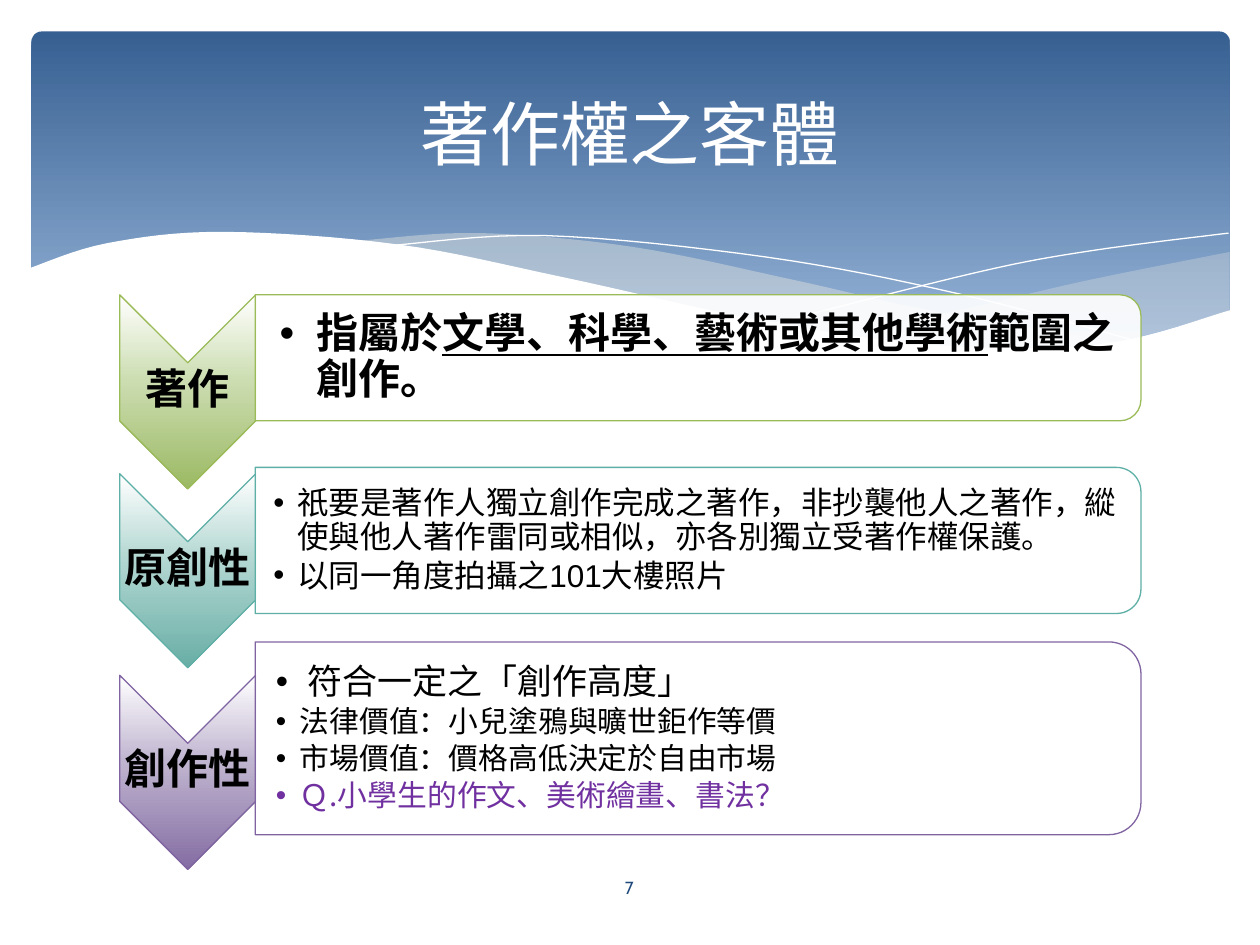
from lxml import etree
from pptx import Presentation
from pptx.dml.color import RGBColor
from pptx.enum.shapes import MSO_SHAPE
from pptx.enum.text import MSO_ANCHOR, PP_ALIGN
from pptx.oxml.ns import qn
from pptx.util import Inches, Pt

CENTER, LEFT = PP_ALIGN.CENTER, PP_ALIGN.LEFT
MIDDLE = MSO_ANCHOR.MIDDLE
CHEVRON, PANEL = MSO_SHAPE.CHEVRON, MSO_SHAPE.ROUND_2_SAME_RECTANGLE
HEADER = MSO_SHAPE.ROUNDED_RECTANGLE
CJK = "Noto Sans CJK SC"
COLORS = {
    "white": "FFFFFF", "black": "000000", "navy": "376092", "sky": "95B3D7",
    "cream": "EEECE1", "number": "1F497D", "question": "7030A0",
    "green": "9BBB59", "green mid": "CCDDB1", "green end": "9BB963",
    "teal": "5EAFA6", "teal mid": "B3D7D2", "teal end": "68AEA6",
    "purple": "8064A2", "purple mid": "C0B5D0", "purple end": "846DA3",
}


def paint(shape, fill=None, line=None, width=0.75, opacity=100):
    """Fill with a colour name or a list of (percent, colour name) stops."""
    shape.shadow.inherit = False
    props = shape.element.spPr
    if isinstance(fill, list):
        shape.fill.gradient()
        shape.fill.gradient_angle = 270
        gradient = props.find(qn("a:gradFill"))
        gradient.set("rotWithShape", "0")
        stops = gradient.find(qn("a:gsLst"))
        for old in list(stops):
            stops.remove(old)
        for position, color in fill:
            stop = etree.SubElement(stops, qn("a:gs"), pos=str(position * 1000))
            etree.SubElement(stop, qn("a:srgbClr"), val=COLORS[color])
    elif fill:
        shape.fill.solid()
        shape.fill.fore_color.rgb = RGBColor.from_string(COLORS[fill])
        if opacity < 100:
            color = props.find(qn("a:solidFill")).find(qn("a:srgbClr"))
            etree.SubElement(color, qn("a:alpha"), val=str(opacity * 1000))
    else:
        shape.fill.background()
    if line:
        shape.line.color.rgb = RGBColor.from_string(COLORS[line])
        shape.line.width = Pt(width)
    else:
        shape.line.fill.background()


def write(paragraph, pieces, size, color="black", latin=CJK, align=LEFT, **formats):
    """Add (text, underlined) pieces as runs."""
    paragraph.alignment = align
    for text, underlined in pieces:
        run = paragraph.add_run()
        run.text = text
        values = {"name": latin, "size": Pt(size), **formats}
        if underlined:
            values["underline"] = True
        for name, value in values.items():
            setattr(run.font, name, value)
        run.font.color.rgb = RGBColor.from_string(COLORS[color])
        east_asian = etree.Element(qn("a:ea"), typeface=CJK)
        run.font._element.find(qn("a:latin")).addnext(east_asian)


prs = Presentation()
prs.slide_width, prs.slide_height = Inches(10), Inches(7.5)
slide = prs.slides.add_slide(prs.slide_layouts[5])
shapes = slide.shapes

# Header band
header = shapes.add_shape(HEADER, Inches(0.25), Inches(0.25), Inches(9.51), Inches(2.7))
header.adjustments[0] = 0.03
paint(header, [(0, "navy"), (90, "sky")])

# Waves: each edge is a smooth curve through a few knots
hairline = {"line": "white", "width": 0}
waves = [
    ([[(9.76, 2), (8.61, 2.23), (7.53, 2.48), (6.61, 2.65)],
      [(6.61, 2.65), (7.69, 2.77), (8.72, 2.74), (9.76, 2.47)]],
     {"fill": "cream", "opacity": 29}),
    ([[(8.93, 2.73), (7.41, 2.47), (6.29, 2.22), (5.02, 1.96), (3.8, 1.85), (2.86, 1.91)],
      [(2.86, 1.91), (4.49, 2.22), (6.01, 2.55), (7.48, 2.76), (8.93, 2.73)]],
     {"fill": "cream", "opacity": 40}),
    ([[(3.09, 1.95), (4.33, 1.87), (6.08, 2.04), (7.6, 2.33), (9.07, 2.72)]], hairline),
    ([[(6.13, 2.57), (7.76, 2.16), (8.66, 1.99), (9.75, 1.85)]], hairline),
    ([[(9.77, 2.46), (8.75, 2.73), (7.44, 2.74), (6.03, 2.54), (4.47, 2.2),
       (3.16, 1.94), (1.77, 1.84), (0.85, 1.93), (0.23, 2.13)],
      [(0.23, 3.29), (9.77, 3.29)]],
     {"fill": "white"}),
]
STEPS = 8
for edges, style in waves:
    outline = []
    for knots in edges:
        padded = [knots[0], *knots, knots[-1]]
        for a, b, c, d in zip(padded, padded[1:], padded[2:], padded[3:]):
            for step in range(STEPS):
                t = step / STEPS
                # Catmull-Rom spline between b and c
                outline.append([
                    Inches(q + t / 2 * (r - p + t * (2 * p - 5 * q + 4 * r - s
                                                     + t * (3 * (q - r) + s - p))))
                    for p, q, r, s in zip(a, b, c, d)])
        outline.append([Inches(value) for value in knots[-1]])
    builder = shapes.build_freeform(*outline[0])
    builder.add_line_segments(outline[1:], close="fill" in style)
    paint(builder.convert_to_shape(), **style)

# Criteria: a chevron label and a panel of points in each row
criteria = [
    {"label": "著作", "accent": "green", "chevron_top": 2.57,
     "panel_middle": 2.84, "panel_height": 1, "inset": 0.19,
     "points": [([("指屬於", False), ("文學、科學、藝術或其他學術", True),
                  ("範圍之創作。", False)], 24, 0.29, {"bold": True})]},
    {"label": "原創性", "accent": "teal", "chevron_top": 3.99,
     "panel_middle": 4.29, "panel_height": 1.16, "inset": 0.14,
     "points": [([("祇要是著作人獨立創作完成之著作，非抄襲他人之著作，縱使與他人著作雷同或相似，"
                   "亦各別獨立受著作權保護。", False)], 18, 0.19, {}),
                ([("以同一角度拍攝之101大樓照片", False)], 18, 0.19, {"latin": "Arial"})]},
    {"label": "創作性", "accent": "purple", "chevron_top": 5.59,
     "panel_middle": 5.86, "panel_height": 1.53, "inset": 0.16,
     "points": [([("符合一定之「創作高度」", False)], 20, 0.25, {}),
                ([("法律價值：小兒塗鴉與曠世鉅作等價", False)], 17, 0.19, {}),
                ([("市場價值：價格高低決定於自由市場", False)], 17, 0.19, {}),
                ([("Ｑ.小學生的作文、美術繪畫、書法？", False)], 17, 0.19,
                 {"color": "question"})]},
]
PANEL_CENTER, PANEL_LENGTH = 5.54, 7.03
MARGIN = 0.02
for row in criteria:
    top, accent = row["chevron_top"], row["accent"]
    middle, height = row["panel_middle"], row["panel_height"]
    chevron = shapes.add_shape(CHEVRON, Inches(0.72), Inches(top), Inches(1.54), Inches(1.08))
    chevron.rotation = 90
    paint(chevron, [(0, "white"), (44, f"{accent} mid"), (100, f"{accent} end")], accent)

    label = shapes.add_textbox(Inches(0.95), Inches(top + 0.3), Inches(1.08), Inches(0.46))
    label_line = label.text_frame.paragraphs[0]
    label_line.line_spacing, label_line.space_after = 0.9, Pt(8.4)
    write(label_line, [(row["label"], False)], 24, align=CENTER, bold=True)

    panel = shapes.add_shape(
        PANEL, Inches(PANEL_CENTER - height / 2), Inches(middle - PANEL_LENGTH / 2),
        Inches(height), Inches(PANEL_LENGTH))
    panel.rotation = 90
    paint(panel, "white", accent, opacity=90)

    text_height = height - 0.12
    details = shapes.add_textbox(
        Inches(2.03), Inches(middle - text_height / 2), Inches(6.97), Inches(text_height))
    for box, inset in ((label, MARGIN), (details, row["inset"])):
        frame_format = {"word_wrap": True, "vertical_anchor": MIDDLE,
                        "margin_left": Inches(inset), "margin_top": Inches(MARGIN),
                        "margin_right": Inches(MARGIN), "margin_bottom": Inches(MARGIN)}
        for name, value in frame_format.items():
            setattr(box.text_frame, name, value)

    for index, (pieces, size, indent, formats) in enumerate(row["points"]):
        frame = details.text_frame
        point = frame.add_paragraph() if index else frame.paragraphs[0]
        point.level = 1
        point.line_spacing, point.space_after = 0.9, Pt(size * 0.15)
        layout = point._p.get_or_add_pPr()
        layout.set("marL", str(Inches(indent)))
        layout.set("indent", str(-Inches(indent)))
        etree.SubElement(layout, qn("a:buFont"), typeface="Arial")
        etree.SubElement(layout, qn("a:buChar"), char="•")
        write(point, pieces, size, **formats)

# Title, brought in front of the header band
title = shapes.title
title.left, title.top, title.width, title.height = map(Inches, (0.5, 0.37, 9, 1.37))
title.text_frame.vertical_anchor = MIDDLE
write(title.text_frame.paragraphs[0], [("著作權之客體", False)], 40, "white", align=CENTER)
shapes.element.append(title.element)

# Page number
number = shapes.add_textbox(Inches(4.36), Inches(6.84), Inches(1.27), Inches(0.4))
number.text_frame.word_wrap = True
number.text_frame.vertical_anchor = MIDDLE
write(number.text_frame.paragraphs[0], [("7", False)], 10, "number", "Cabin", CENTER)

prs.save("out.pptx")
